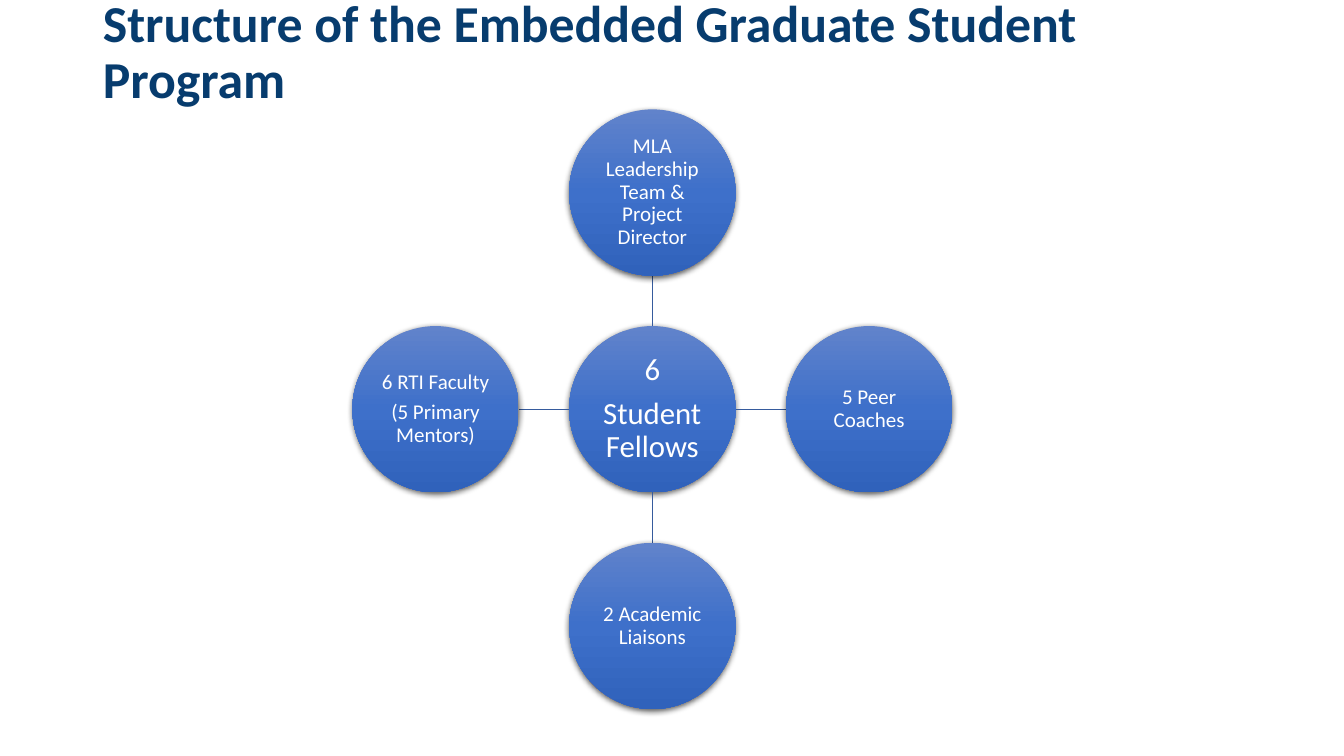
"""Build a slide showing the embedded graduate student program as a hub with four circles."""
from copy import deepcopy

from lxml.etree import SubElement
from pptx import Presentation
from pptx.dml.color import RGBColor
from pptx.enum.shapes import MSO_CONNECTOR, MSO_SHAPE
from pptx.enum.text import MSO_ANCHOR, MSO_AUTO_SIZE, PP_ALIGN
from pptx.oxml.ns import qn
from pptx.util import Inches, Pt

COLORS = {
    "title": "073C6E",
    "text": "FFFFFF",
    "line": "365B9D",
    "top": "6183CB",
    "middle": "3E70CA",
    "bottom": "3062BB",
    "shadow": "000000",
}
FONT = "Calibri"
CENTER_X, CENTER_Y = 6.47, 4.06
DIAMETER, STEP = 1.65, 2.15
RADIUS = DIAMETER / 2


def add_run(p, text, size, color, bold=False):
    r = p.add_run()
    r.text = text
    r.font.name = FONT
    r.font.size = Pt(size)
    r.font.bold = bold
    r.font.color.rgb = RGBColor.from_string(COLORS[color])


def add_circle(shapes, dx, dy, lines, size):
    left = CENTER_X + dx * STEP - RADIUS
    top = CENTER_Y + dy * STEP - RADIUS
    sp = shapes.add_shape(MSO_SHAPE.OVAL, Inches(left), Inches(top), Inches(DIAMETER), Inches(DIAMETER))
    sp.line.fill.background()
    sp.fill.gradient()
    sp.fill.gradient_angle = 270
    stop_list = sp._element.spPr.find(".//" + qn("a:gsLst"))
    stop_list.append(deepcopy(stop_list[0]))
    for stop, position, color in zip(sp.fill.gradient_stops, (0, 0.5, 1), ("top", "middle", "bottom")):
        stop.position = position
        stop.color.rgb = RGBColor.from_string(COLORS[color])

    sp.shadow.inherit = False
    effects = sp._element.spPr.find(qn("a:effectLst"))
    shadow = SubElement(effects, qn("a:outerShdw"), blurRad=str(Pt(4.5)), dist=str(Pt(1.5)),
                        dir="5400000", algn="ctr", rotWithShape="0")
    shade = SubElement(shadow, qn("a:srgbClr"), val=COLORS["shadow"])
    SubElement(shade, qn("a:alpha"), val="63000")

    tf = sp.text_frame
    tf.word_wrap = True
    tf.vertical_anchor = MSO_ANCHOR.MIDDLE
    tf.margin_left = tf.margin_right = tf.margin_top = tf.margin_bottom = Inches(0.01)
    for i, line in enumerate(lines):
        p = tf.paragraphs[0] if i == 0 else tf.add_paragraph()
        p.alignment = PP_ALIGN.CENTER
        p.line_spacing = 0.9
        p.space_after = Pt(size * 0.35)
        add_run(p, line, size, "text")


prs = Presentation()
prs.slide_width, prs.slide_height = Inches(13.33), Inches(7.5)
s = prs.slides.add_slide(prs.slide_layouts[5])

title = s.shapes.title
title.left, title.top, title.width, title.height = Inches(0.92), Inches(0), Inches(11.5), Inches(1.06)
tf = title.text_frame
tf.word_wrap = True
tf.auto_size = MSO_AUTO_SIZE.NONE
tf.vertical_anchor = MSO_ANCHOR.MIDDLE
p = tf.paragraphs[0]
p.alignment = PP_ALIGN.LEFT
p.line_spacing = 0.9
add_run(p, "Structure of the Embedded Graduate Student Program", 37, "title", bold=True)

add_circle(s.shapes, 0, 0, ["6", "Student Fellows"], 22)

partners = [
    (0, -1, ["MLA Leadership Team & Project Director"]),
    (1, 0, ["5 Peer Coaches"]),
    (0, 1, ["2 Academic Liaisons"]),
    (-1, 0, ["6 RTI Faculty", "(5 Primary Mentors)"]),
]
for dx, dy, lines in partners:
    near, far = RADIUS, STEP - RADIUS
    spoke = s.shapes.add_connector(
        MSO_CONNECTOR.STRAIGHT,
        Inches(CENTER_X + dx * near), Inches(CENTER_Y + dy * near),
        Inches(CENTER_X + dx * far), Inches(CENTER_Y + dy * far))
    spoke.line.width = Pt(1)
    spoke.line.color.rgb = RGBColor.from_string(COLORS["line"])
    SubElement(spoke._element.spPr, qn("a:effectLst"))
    add_circle(s.shapes, dx, dy, lines, 15)

prs.save("out.pptx")
